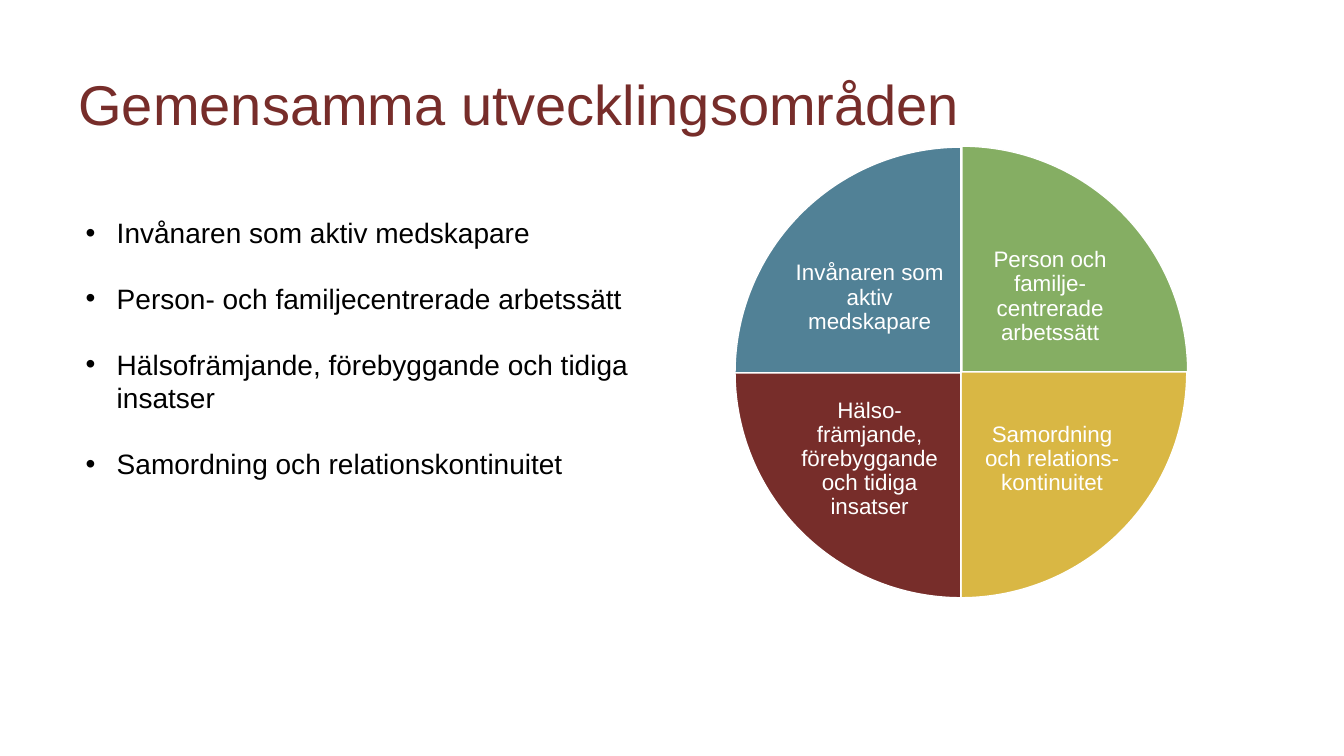
from dataclasses import dataclass

from lxml import etree
from pptx import Presentation
from pptx.dml.color import RGBColor
from pptx.enum.shapes import MSO_SHAPE
from pptx.enum.text import MSO_ANCHOR, PP_ALIGN
from pptx.oxml.ns import qn
from pptx.slide import Slide
from pptx.text.text import TextFrame, _Paragraph
from pptx.util import Inches, Pt

PIE = MSO_SHAPE.PIE
MIDDLE = MSO_ANCHOR.MIDDLE
CENTER = PP_ALIGN.CENTER

WHITE = RGBColor(0xFF, 0xFF, 0xFF)
BLACK = RGBColor(0x00, 0x00, 0x00)
GREEN = RGBColor(0x85, 0xAE, 0x63)
YELLOW = RGBColor(0xD9, 0xB7, 0x44)
MAROON = RGBColor(0x77, 0x2D, 0x2A)
BLUE = RGBColor(0x51, 0x81, 0x96)

FONT = "Arial"
PIE_SIZE = 4.48
LABEL_WIDTH, LABEL_HEIGHT = 1.65, 1.33
LABEL_INSET = Inches(0.02)
# Pie angles are counted in units of 100 000 / 60 000 degrees.
QUARTER_TURN = 54
FULL_TURN = 4 * QUARTER_TURN


@dataclass(frozen=True)
class Quarter:
    text: str
    color: RGBColor
    left: float
    top: float
    label_left: float
    label_top: float


# Clockwise from twelve o'clock
QUARTERS = [
    Quarter("Person och familje-centrerade arbetssätt", GREEN, 7.30, 1.45, 9.59, 2.28),
    Quarter("Samordning och relations-kontinuitet", YELLOW, 7.29, 1.45, 9.61, 3.89),
    Quarter("Hälso-främjande, förebyggande och tidiga insatser", MAROON, 7.29, 1.45, 7.80, 3.89),
    Quarter("Invånaren som aktiv medskapare", BLUE, 7.29, 1.46, 7.80, 2.29),
]

BULLETS = [
    "Invånaren som aktiv medskapare",
    "Person- och familjecentrerade arbetssätt",
    "Hälsofrämjande, förebyggande och tidiga insatser",
    "Samordning och relationskontinuitet",
]


def add_text_frame(slide: Slide, left: float, top: float, width: float, height: float) -> TextFrame:
    box = slide.shapes.add_textbox(Inches(left), Inches(top), Inches(width), Inches(height))
    box.text_frame.word_wrap = True
    return box.text_frame


def set_font(paragraph: _Paragraph, size: int, color: RGBColor) -> None:
    paragraph.font.name = FONT
    paragraph.font.size = Pt(size)
    paragraph.font.color.rgb = color


def set_indent(paragraph: _Paragraph, margin: float, first_line: float = 0) -> None:
    properties = paragraph._p.get_or_add_pPr()
    properties.set("marL", str(Inches(margin)))
    properties.set("indent", str(Inches(first_line)))


def add_title(slide: Slide) -> None:
    paragraph = add_text_frame(slide, 0.6, 0.64, 10.82, 0.77).paragraphs[0]
    paragraph.text = "Gemensamma utvecklingsområden"
    set_indent(paragraph, 0.08)
    set_font(paragraph, 40, MAROON)


def add_bullets(slide: Slide) -> None:
    frame = add_text_frame(slide, 0.75, 2.09, 6.27, 4.21)
    for index, text in enumerate(BULLETS):
        paragraph = frame.add_paragraph() if index else frame.paragraphs[0]
        paragraph.text = text
        if index:
            paragraph.space_before = Pt(23)
        set_indent(paragraph, 0.31, -0.31)
        properties = paragraph._p.get_or_add_pPr()
        etree.SubElement(properties, qn("a:buFont"), typeface=FONT)
        etree.SubElement(properties, qn("a:buChar"), char="•")
        set_font(paragraph, 20, BLACK)


def add_quarter(slide: Slide, quarter: Quarter, start: int) -> None:
    """Draw one pie quarter, starting at the given angle, and its label."""
    size = Inches(PIE_SIZE)
    shape = slide.shapes.add_shape(PIE, Inches(quarter.left), Inches(quarter.top), size, size)
    shape.adjustments[0] = start
    shape.adjustments[1] = (start + QUARTER_TURN) % FULL_TURN
    shape.shadow.inherit = False
    shape.fill.solid()
    shape.fill.fore_color.rgb = quarter.color
    shape.line.color.rgb = WHITE
    shape.line.width = Pt(1)

    frame = add_text_frame(slide, quarter.label_left, quarter.label_top, LABEL_WIDTH, LABEL_HEIGHT)
    frame.margin_left = frame.margin_right = LABEL_INSET
    frame.margin_top = frame.margin_bottom = LABEL_INSET
    frame.vertical_anchor = MIDDLE
    paragraph = frame.paragraphs[0]
    paragraph.text = quarter.text
    paragraph.alignment = CENTER
    paragraph.line_spacing = 0.9
    set_font(paragraph, 16, WHITE)


def main() -> None:
    presentation = Presentation()
    presentation.slide_width = Inches(13.33)
    presentation.slide_height = Inches(7.5)
    slide = presentation.slides.add_slide(presentation.slide_layouts[6])

    add_title(slide)
    add_bullets(slide)
    for index, quarter in enumerate(QUARTERS):
        add_quarter(slide, quarter, (index + 3) * QUARTER_TURN % FULL_TURN)

    presentation.save("out.pptx")


if __name__ == "__main__":
    main()
